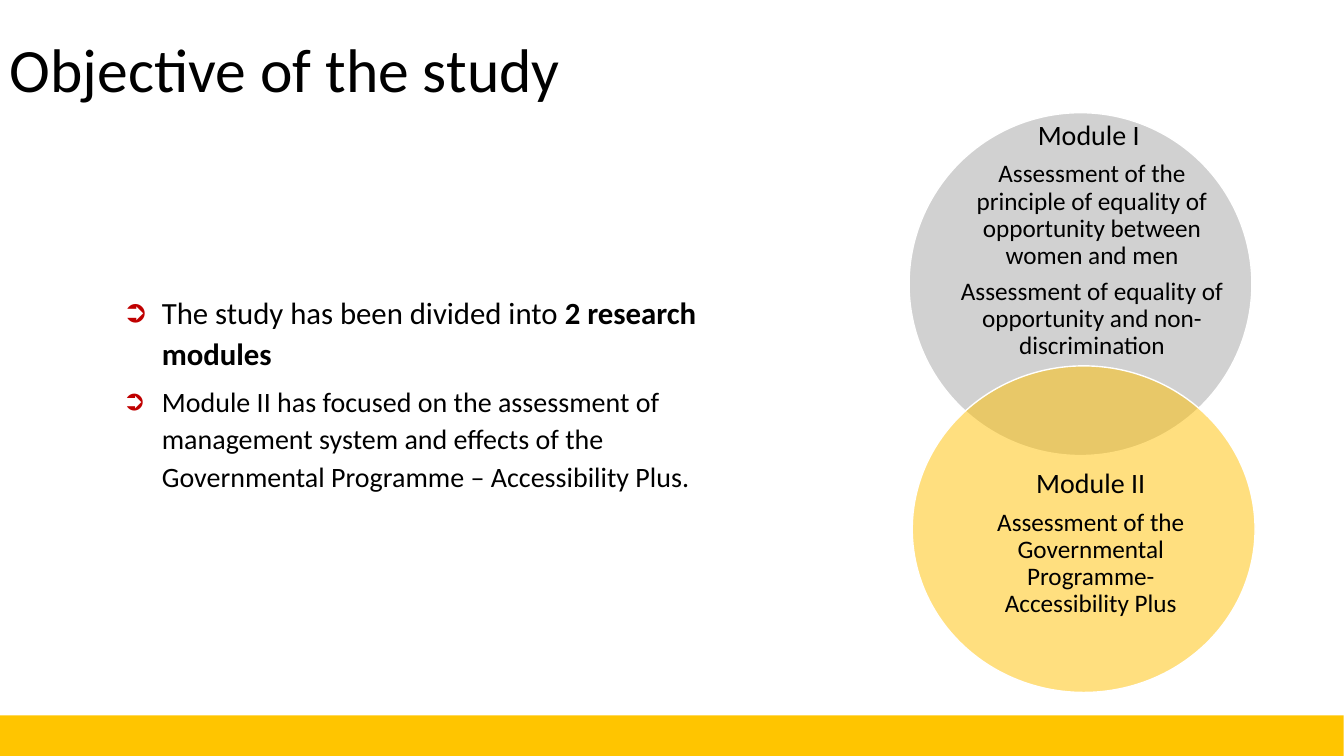
from dataclasses import dataclass

from lxml.etree import SubElement
from pptx import Presentation
from pptx.dml.color import RGBColor
from pptx.enum.shapes import MSO_SHAPE
from pptx.enum.text import MSO_ANCHOR, PP_ALIGN
from pptx.oxml.ns import qn
from pptx.shapes.autoshape import Shape
from pptx.slide import Slide
from pptx.text.text import TextFrame
from pptx.util import Cm, Pt

BLACK = RGBColor(0x00, 0x00, 0x00)
WHITE = RGBColor(0xFF, 0xFF, 0xFF)
GREY = RGBColor(0xA5, 0xA5, 0xA5)
AMBER = RGBColor(0xFF, 0xC0, 0x00)
BAR_YELLOW = RGBColor(0xFF, 0xC5, 0x00)
BULLET_RED = RGBColor(0xC0, 0x00, 0x00)
FONT = "Calibri"


@dataclass(frozen=True)
class Box:
    left: float
    top: float
    width: float
    height: float

    def lengths(self) -> tuple[Cm, Cm, Cm, Cm]:
        return Cm(self.left), Cm(self.top), Cm(self.width), Cm(self.height)


@dataclass(frozen=True)
class Module:
    circle: Box
    color: RGBColor
    label: Box
    title: str
    tasks: tuple[str, ...]


MODULES = (
    Module(
        Box(22.91, 2.84, 8.64, 8.64), GREY, Box(24.08, 3.73, 6.88, 4.67), "Module I ",
        ("Assessment of the principle of equality of opportunity between women and men",
         "Assessment of equality of opportunity and non-discrimination"),
    ),
    Module(
        Box(22.99, 9.22, 8.64, 8.23), AMBER, Box(24.66, 11.48, 5.66, 4.45), "Module II",
        ("Assessment of the Governmental Programme- Accessibility Plus",),
    ),
)


def add_filled_shape(slide: Slide, kind: MSO_SHAPE, box: Box, color: RGBColor) -> Shape:
    shape = slide.shapes.add_shape(kind, *box.lengths())
    shape.shadow.inherit = False
    shape.fill.solid()
    shape.fill.fore_color.rgb = color
    shape.line.fill.background()
    return shape


def add_circle(slide: Slide, box: Box, color: RGBColor) -> None:
    circle = add_filled_shape(slide, MSO_SHAPE.OVAL, box, color)
    fill_color = circle.fill._xPr.find(qn("a:solidFill"))[0]
    SubElement(fill_color, qn("a:alpha"), val="50000")
    circle.line.color.rgb = WHITE
    circle.line.width = Pt(1)


def add_text_frame(slide: Slide, box: Box, anchor: MSO_ANCHOR, inset: bool = True) -> TextFrame:
    frame = slide.shapes.add_textbox(*box.lengths()).text_frame
    frame.word_wrap = True
    frame.vertical_anchor = anchor
    if not inset:
        frame.margin_left = frame.margin_right = frame.margin_top = frame.margin_bottom = 0
    return frame


def add_text(frame: TextFrame, text: str, *, size: float, bold_end: str = "",
             align: PP_ALIGN = PP_ALIGN.LEFT, line_spacing: float = 0.9,
             space_after: float = 0, bullet: str = "") -> None:
    paragraph = frame.paragraphs[0]
    if paragraph.runs:
        paragraph = frame.add_paragraph()
    paragraph.alignment = align
    paragraph.line_spacing = line_spacing
    paragraph.space_after = Pt(space_after)
    if bullet:
        properties = paragraph._p.get_or_add_pPr()
        indent = Cm(0.99)
        properties.set("marL", str(indent))
        properties.set("indent", str(-indent))
        bullet_color = SubElement(properties, qn("a:buClr"))
        SubElement(bullet_color, qn("a:srgbClr"), val=str(BULLET_RED))
        SubElement(properties, qn("a:buFont"), typeface=FONT)
        SubElement(properties, qn("a:buChar"), char=bullet)
    for part, bold in ((text, False), (bold_end, True)):
        if part:
            run = paragraph.add_run()
            run.text = part
            run.font.name = FONT
            run.font.size = Pt(size)
            run.font.bold = bold
            run.font.color.rgb = BLACK


def add_module(slide: Slide, module: Module) -> None:
    add_circle(slide, module.circle, module.color)
    frame = add_text_frame(slide, module.label, MSO_ANCHOR.MIDDLE, inset=False)
    add_text(frame, module.title, size=20, align=PP_ALIGN.CENTER, space_after=7)
    for task in module.tasks:
        add_text(frame, task, size=18, align=PP_ALIGN.CENTER, space_after=6.3)


def main() -> None:
    presentation = Presentation()
    presentation.slide_width = Cm(33.87)
    presentation.slide_height = Cm(19.05)
    slide = presentation.slides.add_slide(presentation.slide_layouts[6])

    # Bottom bar
    add_filled_shape(slide, MSO_SHAPE.RECTANGLE, Box(-0.28, 18.03, 34.14, 1.14), BAR_YELLOW)

    # Title
    title = add_text_frame(slide, Box(0, 0, 29.21, 3.68), MSO_ANCHOR.MIDDLE)
    add_text(title, "Objective of the study", size=44)

    # Bulleted text
    body = add_text_frame(slide, Box(2.84, 7.16, 16.41, 7.11), MSO_ANCHOR.TOP)
    add_text(body, "The study has been divided into ", bold_end="2 research modules",
             size=22, line_spacing=1.12, space_after=6, bullet="➲")
    add_text(body, "Module II has focused on the assessment of management system and effects "
             "of the Governmental Programme – Accessibility Plus.",
             size=20, line_spacing=1.12, space_after=6, bullet="➲")

    # Overlapping module circles
    for module in MODULES:
        add_module(slide, module)

    presentation.save("out.pptx")


if __name__ == "__main__":
    main()
